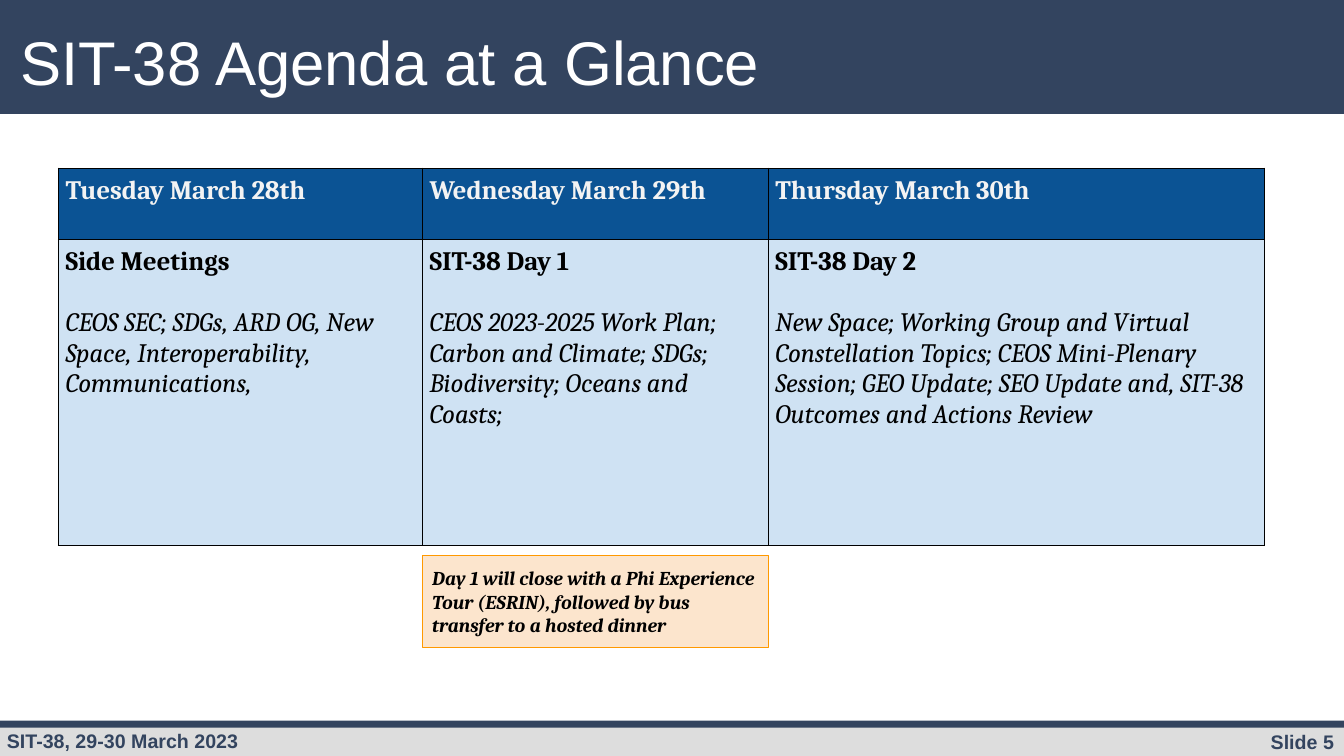
import pptx
import pptx.util
import pptx.dml.color
import pptx.enum.shapes
import pptx.enum.text
import pptx.oxml

Pt = pptx.util.Pt
ALIGN = pptx.enum.text.PP_ALIGN
ANCHOR = pptx.enum.text.MSO_ANCHOR

WIDTH, HEIGHT = 960, 540
COLORS = {
    "navy": "33445F",
    "footer": "DDDDDD",
    "white": "FFFFFF",
    "black": "000000",
    "header": "0B5394",
    "header_text": "F3F3F3",
    "body": "CFE2F3",
    "note": "FCE5CD",
    "note_line": "FF9900",
}

# Heading, session title and topics for each day, with its column width
DAYS = [
    ("Tuesday March 28th", "Side Meetings",
     "CEOS SEC; SDGs, ARD OG, New Space, Interoperability, Communications,", 260),
    ("Wednesday March 29th", "SIT-38 Day 1",
     "CEOS 2023-2025 Work Plan; Carbon and Climate; SDGs; Biodiversity; "
     "Oceans and Coasts;", 247),
    ("Thursday March 30th", "SIT-38 Day 2",
     "New Space; Working Group and Virtual Constellation Topics; CEOS Mini-Plenary "
     "Session; GEO Update; SEO Update and, SIT-38 Outcomes and Actions Review", 354.5),
]
ROW_HEIGHTS = [51.1, 218.2]


def rgb(name):
    return pptx.dml.color.RGBColor.from_string(COLORS[name])


def add_run(p, text, size, font, color, bold=False, italic=False):
    r = p.add_run()
    r.text = text
    r.font.size = Pt(size)
    r.font.name = font
    r.font.color.rgb = rgb(color)
    r.font.bold = bold
    r.font.italic = italic


def set_margins(box, left, top, right, bottom):
    box.margin_left, box.margin_top = Pt(left), Pt(top)
    box.margin_right, box.margin_bottom = Pt(right), Pt(bottom)


def add_rect(s, x, y, w, h, fill, line=None):
    sp = s.shapes.add_shape(pptx.enum.shapes.MSO_SHAPE.RECTANGLE,
                            Pt(x), Pt(y), Pt(w), Pt(h))
    sp.shadow.inherit = False
    sp.fill.solid()
    sp.fill.fore_color.rgb = rgb(fill)
    if line:
        sp.line.color.rgb = rgb(line)
        sp.line.width = Pt(0.75)
    else:
        sp.line.fill.background()
    return sp


def add_label(s, x, y, w, h, text, size, color, bold=False, align=ALIGN.LEFT, top=3.6):
    tf = s.shapes.add_textbox(Pt(x), Pt(y), Pt(w), Pt(h)).text_frame
    tf.word_wrap = True
    set_margins(tf, 7.2, top, 7.2, 3.6)
    p = tf.paragraphs[0]
    p.alignment = align
    add_run(p, text, size, "Arial", color, bold)


def add_note(s, x, y, w, h, text):
    tf = add_rect(s, x, y, w, h, "note", "note_line").text_frame
    tf.word_wrap = True
    tf.vertical_anchor = ANCHOR.MIDDLE
    set_margins(tf, 7.2, 7.2, 7.2, 7.2)
    p = tf.paragraphs[0]
    p.alignment = ALIGN.LEFT
    add_run(p, text, 14, "Cambria", "black", bold=True, italic=True)


def style_cell(cell, fill):
    set_margins(cell, 5, 5, 5, 5)
    cell.vertical_anchor = ANCHOR.TOP
    # Borders come before the fill in the cell properties
    tc_pr = cell._tc.get_or_add_tcPr()
    for side in ("lnL", "lnR", "lnT", "lnB"):
        tc_pr.append(pptx.oxml.parse_xml(
            f'<a:{side} xmlns:a="http://schemas.openxmlformats.org/drawingml/2006/main" '
            f'w="{Pt(1)}"><a:solidFill><a:srgbClr val="{COLORS["black"]}"/>'
            f'</a:solidFill></a:{side}>'))
    cell.fill.solid()
    cell.fill.fore_color.rgb = rgb(fill)


def add_agenda(s, x, y):
    width = sum(day[-1] for day in DAYS)
    table = s.shapes.add_table(len(ROW_HEIGHTS), len(DAYS), Pt(x), Pt(y),
                               Pt(width), Pt(sum(ROW_HEIGHTS))).table
    for row, height in zip(table.rows, ROW_HEIGHTS):
        row.height = Pt(height)
    for col, (date, session, topics, col_width) in enumerate(DAYS):
        table.columns[col].width = Pt(col_width)
        head, body = table.cell(0, col), table.cell(1, col)
        style_cell(head, "header")
        style_cell(body, "body")
        add_run(head.text_frame.paragraphs[0], date, 19, "Cambria", "header_text", bold=True)
        add_run(body.text_frame.paragraphs[0], session, 19, "Cambria", "black", bold=True)
        p = body.text_frame.add_paragraph()
        p.space_before = Pt(21.8)
        add_run(p, topics, 19, "Cambria", "black", italic=True)


def main():
    prs = pptx.Presentation()
    prs.slide_width, prs.slide_height = Pt(WIDTH), Pt(HEIGHT)
    s = prs.slides.add_slide(prs.slide_layouts[6])

    # Title band and footer
    add_rect(s, 0, 0, WIDTH, 81.4, "navy")
    add_rect(s, 0, 517.7, WIDTH, 22.3, "footer")
    add_rect(s, 0, 514.8, WIDTH, 5, "navy")
    add_label(s, -2.2, 517, 388, 24, "SIT-38, 29-30 March 2023", 14, "navy", bold=True)
    add_label(s, 7.2, 7.9, 682.6, 60.5, "SIT-38 Agenda at a Glance", 44, "white", top=9)
    add_label(s, 808.6, 517.7, 151.4, 24, "Slide 5", 14, "navy", bold=True,
              align=ALIGN.RIGHT)

    # Agenda and evening note
    add_note(s, 301.7, 396.7, 247, 65.5,
             "Day 1 will close with a Phi Experience Tour (ESRIN), followed by bus "
             "transfer to a hosted dinner")
    add_agenda(s, 41.8, 120.2)

    prs.save("out.pptx")


if __name__ == "__main__":
    main()
